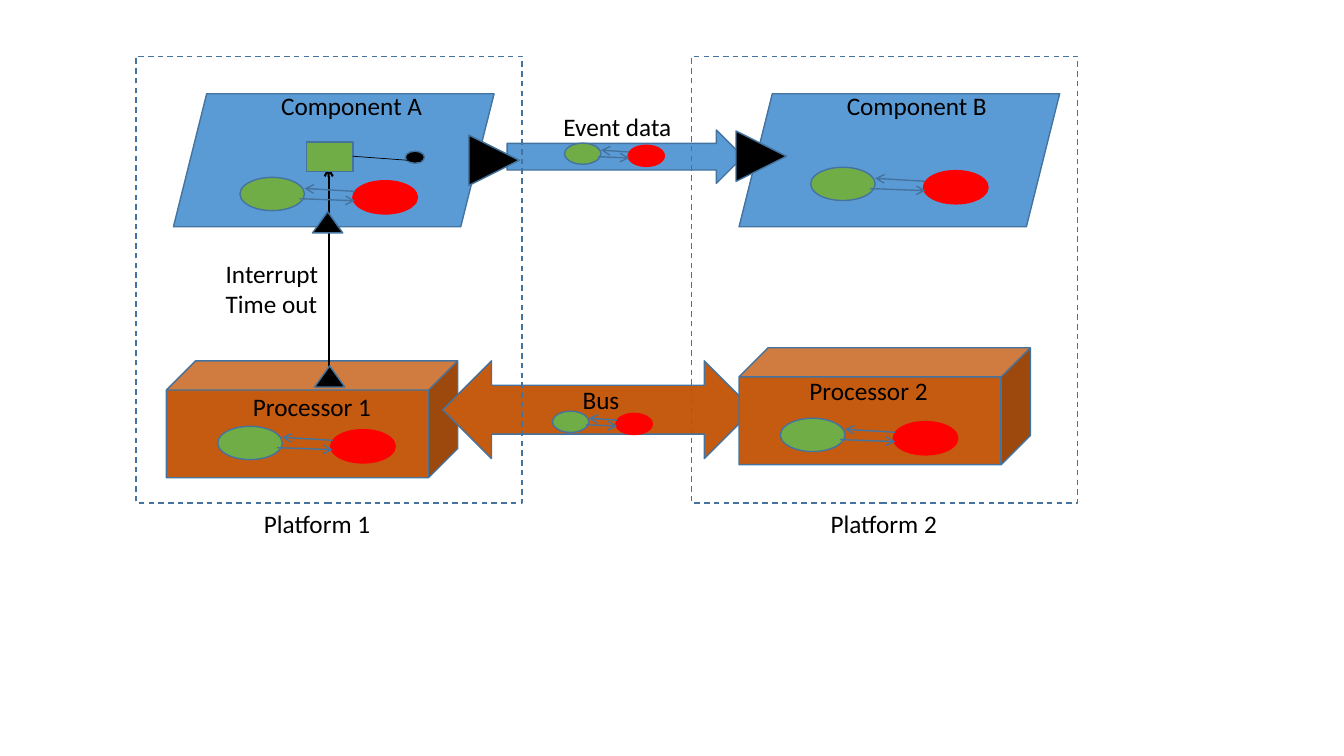
from dataclasses import dataclass

from lxml.etree import SubElement
from pptx import Presentation
from pptx.dml.color import RGBColor
from pptx.enum.dml import MSO_LINE
from pptx.enum.shapes import MSO_CONNECTOR, MSO_SHAPE
from pptx.enum.text import MSO_AUTO_SIZE
from pptx.oxml.ns import qn
from pptx.util import Inches, Pt


@dataclass(frozen=True)
class Theme:
    blue: str = "5B9BD5"
    edge: str = "43739E"
    brown: str = "C55A11"
    green: str = "70AD47"
    red: str = "FF0000"
    black: str = "000000"
    font: str = "Calibri"
    size: int = 18


THEME = Theme()


def color(code):
    return RGBColor.from_string(code)


def add_block(shapes, kind, x, y, w, h, fill=None, edge=THEME.edge, turn=0, dash=False):
    block = shapes.add_shape(kind, Inches(x), Inches(y), Inches(w), Inches(h))
    block.shadow.inherit = False
    block.rotation = turn
    if fill:
        block.fill.solid()
        block.fill.fore_color.rgb = color(fill)
    else:
        block.fill.background()
    block.line.color.rgb = color(edge)
    block.line.width = Pt(1)
    if dash:
        block.line.dash_style = MSO_LINE.DASH
    return block


def add_label(shapes, text, x, y, w, h=0.4, wrap=True, size=THEME.size, tint=THEME.black):
    box = shapes.add_textbox(Inches(x), Inches(y), Inches(w), Inches(h))
    frame = box.text_frame
    frame.word_wrap = wrap
    frame.auto_size = MSO_AUTO_SIZE.SHAPE_TO_FIT_TEXT
    frame.text = text
    for par in frame.paragraphs:
        font = par.runs[0].font
        font.name = THEME.font
        font.size = Pt(size)
        font.color.rgb = color(tint)
    return box


def add_line(shapes, start, end, tint=THEME.edge, width=1, arrow=True):
    points = [Inches(value) for value in (*start, *end)]
    line = shapes.add_connector(MSO_CONNECTOR.STRAIGHT, *points)
    line.line.color.rgb = color(tint)
    line.line.width = Pt(width)
    if arrow:
        SubElement(line.line._get_or_add_ln(), qn("a:tailEnd"), type="arrow")
    SubElement(line._element.spPr, qn("a:effectLst"))
    return line


def add_pair(shapes, x, y, w=0.64, h=0.33):
    """Group a green and a red state joined by an arrow each way."""
    group = shapes.add_group_shape().shapes

    def spot(across, down):
        return x + across * w, y + down * h

    add_block(group, MSO_SHAPE.OVAL, *spot(1.75, 0.1), w, h, THEME.red, THEME.red)
    add_block(group, MSO_SHAPE.OVAL, x, y, w, h, THEME.green)
    add_line(group, spot(1.78, 0.42), spot(1, 0.33))
    add_line(group, spot(0.92, 0.64), spot(1.78, 0.7))


def add_parts(shapes):
    """Draw the components, the processors and the channels between them."""
    for x, name in ((1.72, "Component A"), (7.33, "Component B")):
        add_block(shapes, MSO_SHAPE.PARALLELOGRAM, x, 0.93, 3.18, 1.32, THEME.blue)
        add_label(shapes, name, x + 0.97, 0.85, 1.62, wrap=False)
    add_block(shapes, MSO_SHAPE.RIGHT_ARROW, 5.03, 1.29, 2.34, 0.53, THEME.blue)
    for x, y in ((4.65, 1.34), (7.3, 1.3)):
        add_block(shapes, MSO_SHAPE.ISOSCELES_TRIANGLE, x, y, 0.5, 0.5, THEME.black, turn=90)
    add_block(shapes, MSO_SHAPE.CUBE, 1.65, 3.58, 2.89, 1.16, THEME.brown)
    add_block(shapes, MSO_SHAPE.LEFT_RIGHT_ARROW, 4.39, 3.58, 3.08, 0.97, THEME.brown)
    add_block(shapes, MSO_SHAPE.CUBE, 7.33, 3.45, 2.89, 1.16, THEME.brown)
    add_label(shapes, "Event data", 5.49, 1.06, 1.38)
    add_label(shapes, "Processor 1", 2.41, 3.83, 1.98)
    add_label(shapes, "Processor 2", 7.93, 3.67, 1.98)
    add_label(shapes, "Bus", 5.68, 3.76, 0.67)


def add_frames(shapes):
    for x, left, name in ((1.35, 2.52, "Platform 1"), (6.86, 8.14, "Platform 2")):
        add_block(shapes, MSO_SHAPE.RECTANGLE, x, 0.56, 3.83, 4.43, dash=True)
        add_label(shapes, name, left, 4.99, 1.27, wrap=False)


def add_signal(shapes):
    """Draw the interrupt that rises from Processor 1 to the switch in Component A."""
    add_line(shapes, (3.26, 3.76), (3.26, 1.66), THEME.black, 1.5)
    add_block(shapes, MSO_SHAPE.RECTANGLE, 3.04, 1.41, 0.46, 0.29, THEME.green)
    add_label(shapes, "Interrupt\nTime out", 2.14, 2.51, 1.16, 0.71)
    add_block(shapes, MSO_SHAPE.OVAL, 4.02, 1.5, 0.19, 0.12, THEME.black)
    add_line(shapes, (4.18, 1.6), (3.5, 1.55), THEME.black, 0.5, arrow=False)


def main():
    deck = Presentation()
    deck.slide_width, deck.slide_height = Inches(13.33), Inches(7.5)
    shapes = deck.slides.add_slide(deck.slide_layouts[6]).shapes
    add_parts(shapes)
    add_frames(shapes)
    add_signal(shapes)
    for x, y in ((2.38, 1.76), (8.04, 1.66), (2.16, 4.23), (7.74, 4.15)):
        add_pair(shapes, x, y)
    for x, y in ((5.6, 1.42), (5.48, 4.08)):
        add_pair(shapes, x, y, 0.36, 0.21)
    for x, y in ((3.1, 2.1), (3.12, 3.63)):
        add_block(shapes, MSO_SHAPE.ISOSCELES_TRIANGLE, x, y, 0.3, 0.21, THEME.black)
    deck.save("out.pptx")


if __name__ == "__main__":
    main()
